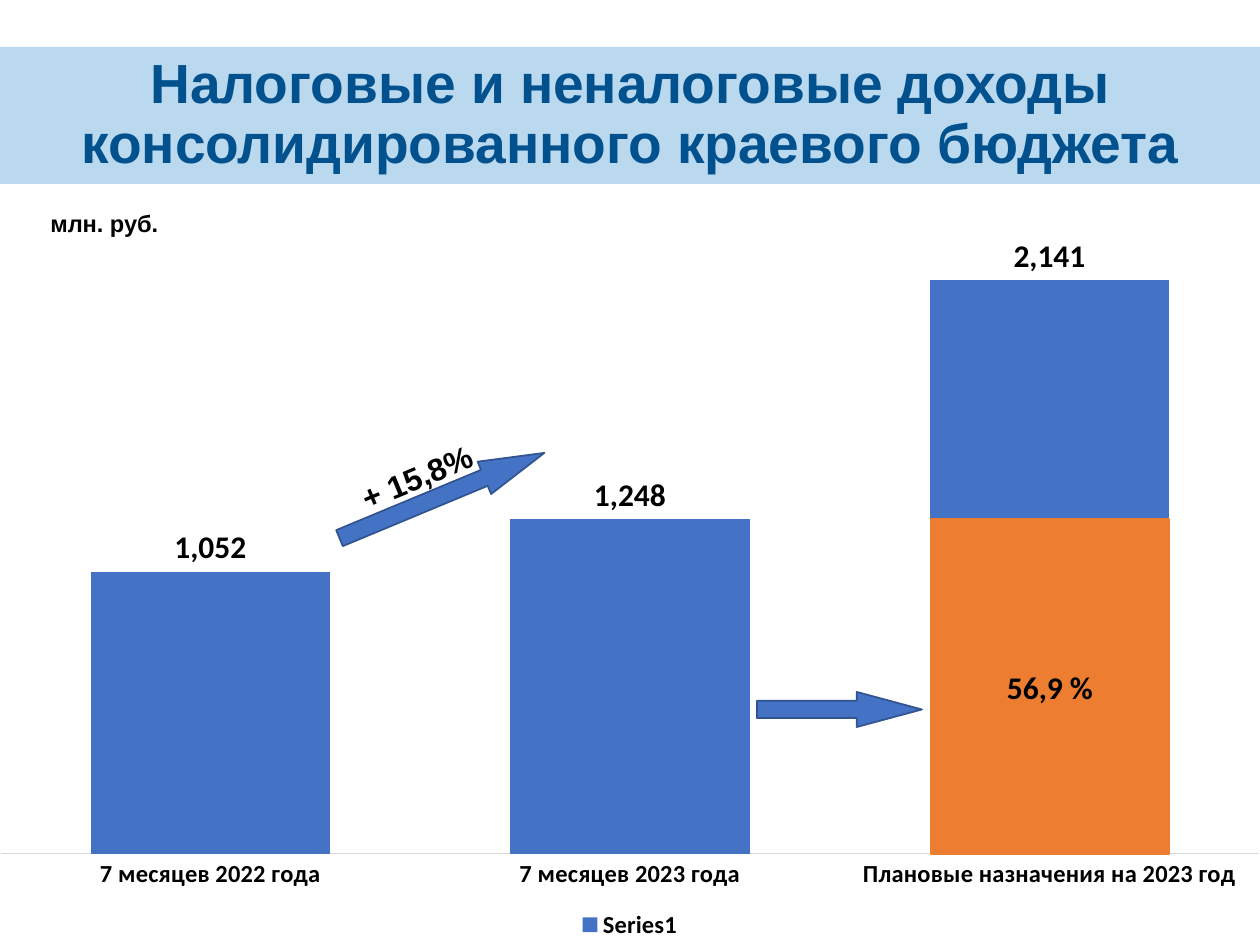
import pptx
import pptx.chart.data
import pptx.dml.color
import pptx.enum.chart
import pptx.enum.shapes
import pptx.enum.text
import pptx.oxml
import pptx.util

PX = 914400 / 126
BLUE, ORANGE, BLACK = "4472C4", "ED7D31", "000000"
MIDDLE = pptx.enum.text.MSO_ANCHOR.MIDDLE
BOTTOM = pptx.enum.text.MSO_ANCHOR.BOTTOM
CENTER = pptx.enum.text.PP_ALIGN.CENTER
SHAPES = pptx.enum.shapes.MSO_SHAPE
C_NS = 'xmlns:c="http://schemas.openxmlformats.org/drawingml/2006/chart"'


def emu(*lengths):
    return [pptx.util.Emu(round(length * PX)) for length in lengths]


def color(code):
    return pptx.dml.color.RGBColor.from_string(code)


def format_font(font, size, name="Calibri", code=BLACK):
    values = {"size": pptx.util.Pt(size), "name": name, "bold": True}
    for key, value in values.items():
        setattr(font, key, value)
    font.color.rgb = color(code)


def write(shape, text, size, name, code=BLACK, align=CENTER, anchor=MIDDLE):
    frame = shape.text_frame
    values = {"word_wrap": True, "vertical_anchor": anchor,
              "auto_size": pptx.enum.text.MSO_AUTO_SIZE.NONE}
    for key, value in values.items():
        setattr(frame, key, value)
    para = frame.paragraphs[0]
    para.alignment = align
    span = para.add_run()
    span.text = text
    format_font(span.font, size, name, code)
    return para


def add_filled(page, kind, box, fill, line):
    shape = page.shapes.add_shape(kind, *emu(*box))
    shape.shadow.inherit = False
    shape.fill.solid()
    shape.fill.fore_color.rgb = color(fill)
    shape.line.color.rgb = color(line)
    shape.line.width = pptx.util.Pt(1)
    return shape


def add_arrow(page, box, rotation=0):
    arrow = add_filled(page, SHAPES.RIGHT_ARROW, box, BLUE, "325491")
    arrow.adjustments[0] = 0.494
    arrow.adjustments[1] = 1.857
    arrow.rotation = rotation
    return arrow


def fill_title(page, box):
    title = page.shapes.title
    title.left, title.top, title.width, title.height = emu(*box)
    title.fill.solid()
    title.fill.fore_color.rgb = color("BAD8EE")
    para = write(title, "Налоговые и неналоговые доходы консолидированного краевого бюджета",
                 31.5, "Arial", "00518E")
    para.line_spacing = 0.9


def add_unit(page, box):
    unit = page.shapes.add_textbox(*emu(*box))
    write(unit, "млн. руб.", 13.5, "Arial", align=pptx.enum.text.PP_ALIGN.LEFT,
          anchor=pptx.enum.text.MSO_ANCHOR.TOP)


def add_income_chart(page, box):
    data = pptx.chart.data.CategoryChartData(number_format="#,##0")
    data.categories = ["7 месяцев 2022 года", "7 месяцев 2023 года",
                       "Плановые назначения на 2023 год"]
    data.add_series("Series1", [1052, 1248, 2141])
    chart = page.shapes.add_chart(
        pptx.enum.chart.XL_CHART_TYPE.COLUMN_CLUSTERED, *emu(*box), data).chart
    format_font(chart.font, 14)
    chart.has_title = False

    # Legend
    chart.has_legend = True
    chart.legend.position = pptx.enum.chart.XL_LEGEND_POSITION.BOTTOM
    chart.legend.include_in_layout = False
    format_font(chart.legend.font, 14)

    # Axes
    none = pptx.enum.chart.XL_TICK_MARK.NONE
    months = chart.category_axis
    months.major_tick_mark = months.minor_tick_mark = none
    months.format.line.color.rgb = color("D9D9D9")
    months.format.line.width = pptx.util.Pt(0.75)
    format_font(months.tick_labels.font, 14)
    amounts = {"visible": False, "has_major_gridlines": False,
               "minimum_scale": 0, "maximum_scale": 2500}
    for key, value in amounts.items():
        setattr(chart.value_axis, key, value)

    # Columns and their values
    plot = chart.plots[0]
    plot.gap_width = 75
    plot.vary_by_categories = False
    plot.series[0].format.fill.solid()
    plot.series[0].format.fill.fore_color.rgb = color(BLUE)
    labels = plot.series[0].data_labels
    values = {"show_value": True, "number_format": "#,##0",
              "number_format_is_linked": False,
              "position": pptx.enum.chart.XL_LABEL_POSITION.OUTSIDE_END}
    for key, value in values.items():
        setattr(labels, key, value)
    format_font(labels.font, 18)

    # Full-width plot area above the legend
    area = chart.plots[0]._element.getparent()
    for old in area.findall("{*}layout"):
        area.remove(old)
    area.insert(0, pptx.oxml.parse_xml(
        f'<c:layout {C_NS}><c:manualLayout><c:layoutTarget val="inner"/>'
        '<c:xMode val="edge"/><c:yMode val="edge"/><c:x val="0"/><c:y val="0"/>'
        '<c:w val="1"/><c:h val="0.88"/></c:manualLayout></c:layout>'))


def add_progress(page, box):
    left, top, width, height = box
    # Growth between the two years, with its text above the shaft
    growth = add_arrow(page, (left, top, 222, 35), 337.4)
    write(growth, "+ 15,8%", 18, "Arial", anchor=BOTTOM)
    growth.text_frame.margin_top = 0
    growth.text_frame.margin_bottom = emu(17)[0]
    # Share of the plan already collected
    share = add_filled(page, SHAPES.RECTANGLE,
                       (left + width - 238, top + height - 335, 238, 335), ORANGE, ORANGE)
    write(share, "56,9 %", 18, "Calibri")
    add_arrow(page, (left + 426, top + 214, 165, 35))


def main():
    deck = pptx.Presentation()
    deck.slide_width, deck.slide_height = emu(1260, 945)
    page = deck.slides.add_slide(deck.slide_layouts[5])
    fill_title(page, (0, 47, 1260, 137))
    add_unit(page, (38, 203, 205, 42))
    add_income_chart(page, (0, 184, 1260, 761))
    add_progress(page, (331, 478, 838, 376))
    deck.save("out.pptx")


if __name__ == "__main__":
    main()
